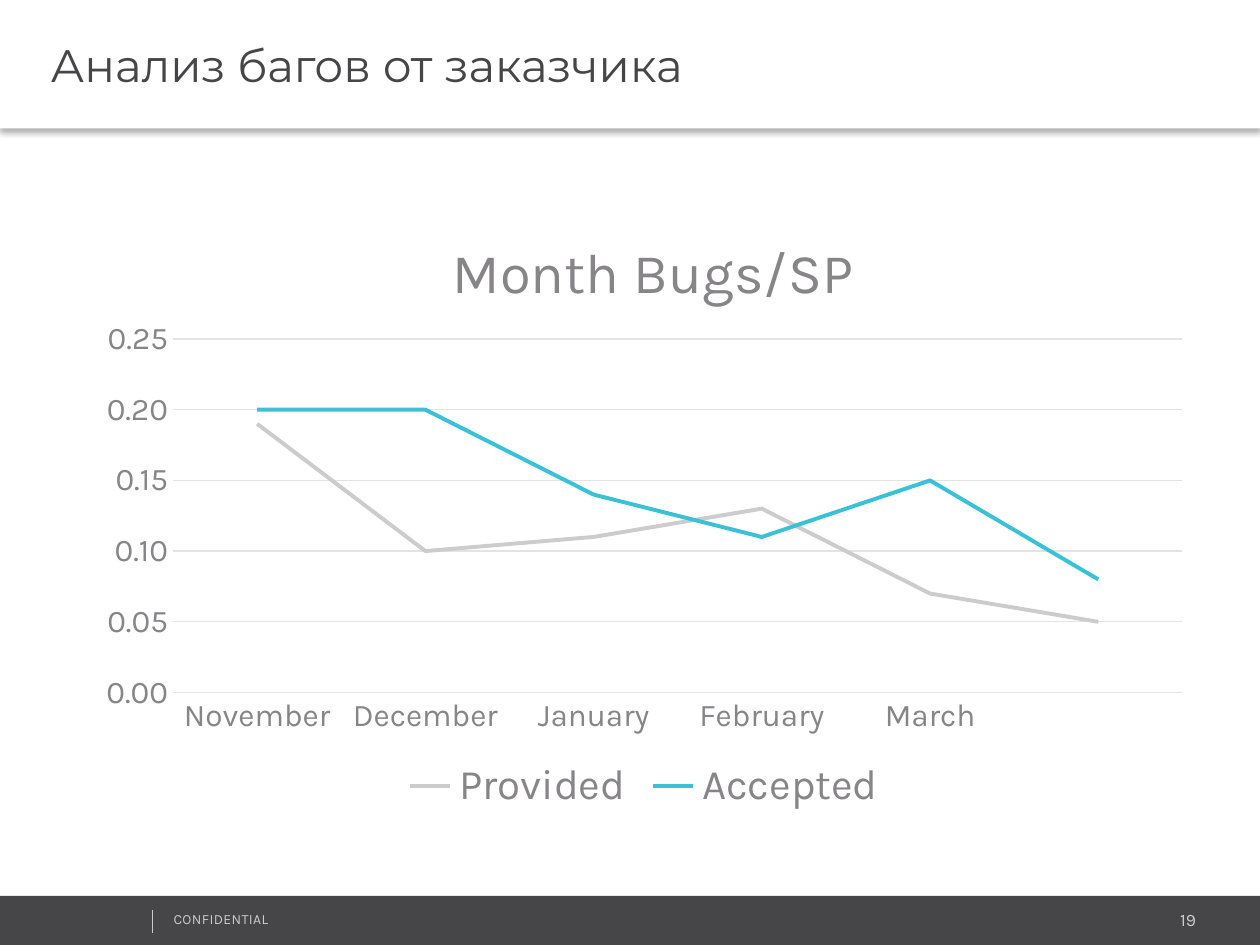
from dataclasses import dataclass

import pptx
import pptx.chart.data
import pptx.dml.color
import pptx.enum.chart
import pptx.enum.shapes
import pptx.enum.text
import pptx.oxml
import pptx.oxml.ns
import pptx.util
from pptx.util import Cm, Pt

DARK, GREY, PALE, RULE = "464547", "878588", "CCCCCC", "E3E3E4"
BODY, HEAD = "Karla", "Montserrat"
ALIGN = pptx.enum.text.PP_ALIGN
KIND = pptx.enum.chart


@dataclass
class Box:
    left: float
    top: float
    width: float
    height: float

    def cm(self) -> tuple:
        return Cm(self.left), Cm(self.top), Cm(self.width), Cm(self.height)


@dataclass
class Label:
    text: str
    box: Box
    size: float
    align: ALIGN
    gap: int = 0


@dataclass
class Series:
    name: str
    vals: tuple
    color: str


LABELS = [
    Label("19", Box(20.22, 18.21, 4.14, 0.69), 10, ALIGN.RIGHT),
    Label("CONFIDENTIAL", Box(3.25, 18.24, 6.43, 0.61), 8, ALIGN.LEFT, 20),
]
MONTHS = ["November", "December", "January", "February", "March", ""]
SERIES = [
    Series("Provided", (0.19, 0.1, 0.11, 0.13, 0.07, 0.05), PALE),
    Series("Accepted", (0.2, 0.2, 0.14, 0.11, 0.15, 0.08), "39C2D7"),
]


def paint(color, code: str) -> None:
    """Set a color format from a hex string."""
    color.rgb = pptx.dml.color.RGBColor.from_string(code)


def style(font, size: float, code: str, face: str = BODY) -> None:
    font.size, font.name, font.bold = Pt(size), face, False
    paint(font.color, code)


def stroke(line, code: str, width: float) -> None:
    line.width = Pt(width)
    line.fill.solid()
    paint(line.color, code)


def add_bar(slide, box: Box, code: str):
    bar = slide.shapes.add_shape(pptx.enum.shapes.MSO_SHAPE.RECTANGLE, *box.cm())
    bar.shadow.inherit = False
    bar.fill.solid()
    paint(bar.fill.fore_color, code)
    bar.line.fill.background()
    return bar


def add_label(slide, label: Label) -> None:
    frame = slide.shapes.add_textbox(*label.box.cm()).text_frame
    frame.word_wrap = True
    frame.text = label.text
    para = frame.paragraphs[0]
    para.alignment = label.align
    style(para.runs[0].font, label.size, PALE)
    if label.gap:
        para.runs[0].font._element.set("spc", str(label.gap))


def add_head(slide, text: str) -> None:
    bar = add_bar(slide, Box(0, 0, 25.4, 2.59), "FFFFFF")
    glow = bar.element.spPr.find(pptx.oxml.ns.qn("a:effectLst"))
    glow.append(pptx.oxml.parse_xml(
        f'<a:outerShdw {pptx.oxml.ns.nsdecls("a")} blurRad="{Pt(3.1)}" '
        f'dist="{Pt(2)}" dir="5400000" algn="t" rotWithShape="0">'
        '<a:srgbClr val="000000"><a:alpha val="30000"/></a:srgbClr></a:outerShdw>'))
    frame = bar.text_frame
    frame.word_wrap = True
    frame.margin_left = Cm(1.02)
    frame.vertical_anchor = pptx.enum.text.MSO_ANCHOR.MIDDLE
    frame.text = text
    frame.paragraphs[0].alignment = ALIGN.LEFT
    style(frame.paragraphs[0].runs[0].font, 26, DARK, HEAD)


def add_rule(slide, left: float, top: float, end: float) -> None:
    rule = slide.shapes.add_connector(
        pptx.enum.shapes.MSO_CONNECTOR.STRAIGHT, Cm(left), Cm(top), Cm(left), Cm(end))
    stroke(rule.line, PALE, 0.25)
    rule.element.spPr.append(pptx.oxml.parse_xml(
        f'<a:effectLst {pptx.oxml.ns.nsdecls("a")}/>'))


def place(node, index: int, target: str, **parts: float) -> None:
    """Give a chart part a fixed place, in fractions of the chart."""
    for old in node.findall(pptx.oxml.ns.qn("c:layout")):
        node.remove(old)
    inner = f'<c:layoutTarget val="{target}"/>' if target else ""
    inner += "".join(f'<c:{key}Mode val="edge"/>' for key in "xy")
    inner += "".join(f'<c:{key} val="{val}"/>' for key, val in parts.items())
    node.insert(index, pptx.oxml.parse_xml(
        f'<c:layout {pptx.oxml.ns.nsdecls("c")}><c:manualLayout>{inner}'
        '</c:manualLayout></c:layout>'))


def add_plot(slide, box: Box) -> None:
    data = pptx.chart.data.CategoryChartData(number_format="0.00")
    data.categories = MONTHS
    for item in SERIES:
        data.add_series(item.name, item.vals)
    chart = slide.shapes.add_chart(KIND.XL_CHART_TYPE.LINE, *box.cm(), data).chart
    style(chart.font, 10, DARK)

    chart.has_title = True
    frame = chart.chart_title.text_frame
    frame.text = "Month Bugs/SP"
    style(frame.paragraphs[0].runs[0].font, 32, GREY)
    place(chart.chart_title._element, 1, "", x=0.32, y=0.06)
    area = chart.element.find(".//" + pptx.oxml.ns.qn("c:plotArea"))
    place(area, 0, "inner", x=0.08, y=0.24, w=0.9, h=0.56)

    chart.has_legend = True
    chart.legend.position = KIND.XL_LEGEND_POSITION.BOTTOM
    chart.legend.include_in_layout = False
    style(chart.legend.font, 24, GREY)

    base, side = chart.category_axis, chart.value_axis
    for axis in (base, side):
        axis.major_tick_mark = axis.minor_tick_mark = KIND.XL_TICK_MARK.NONE
        style(axis.tick_labels.font, 18, GREY)
    stroke(base.format.line, RULE, 0.75)
    side.format.line.fill.background()
    side.has_major_gridlines = True
    stroke(side.major_gridlines.format.line, RULE, 0.75)
    side.minimum_scale, side.maximum_scale, side.major_unit = 0, 0.25, 0.05
    side.tick_labels.number_format = "0.00"
    side.tick_labels.number_format_is_linked = False

    plot = chart.plots[0]
    plot.vary_by_categories = False
    for line, item in zip(plot.series, SERIES):
        line.smooth = False
        line.marker.style = KIND.XL_MARKER_STYLE.NONE
        stroke(line.format.line, item.color, 2.25)


def main() -> None:
    deck = pptx.Presentation()
    deck.slide_width, deck.slide_height = Cm(25.4), Cm(19.05)
    slide = deck.slides.add_slide(deck.slide_layouts[6])
    add_bar(slide, Box(0, 18.06, 25.4, 1.02), DARK)
    for label in LABELS:
        add_label(slide, label)
    add_rule(slide, 3.07, 18.34, 18.8)
    add_head(slide, "Анализ багов от заказчика")
    add_plot(slide, Box(1.68, 3.78, 22.61, 12.73))
    deck.save("out.pptx")


if __name__ == "__main__":
    main()
